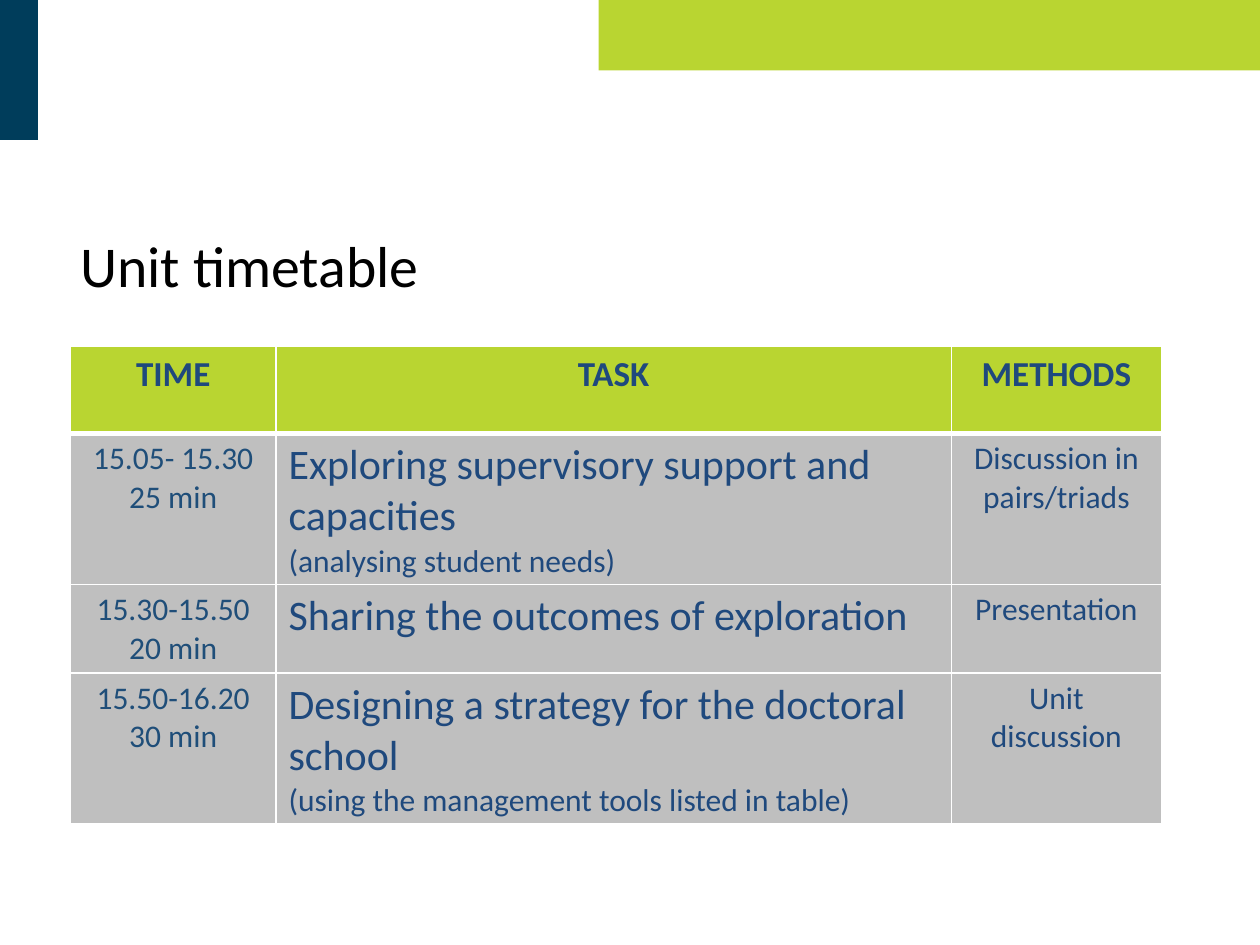
from pptx import Presentation
from pptx.dml.color import RGBColor
from pptx.enum.shapes import MSO_SHAPE as Shape
from pptx.enum.text import MSO_ANCHOR as Anchor, PP_ALIGN as Align
from pptx.oxml.ns import qn
from pptx.util import Inches, Pt
from lxml.etree import SubElement

FONT = "Calibri"
LIME, NAVY, GREY, WHITE = "B9D531", "003D5B", "BFBFBF", "FFFFFF"
BLUE, TIME_BLUE = "1F497D", "1F4E79"

COLUMN_WIDTHS = [1.63, 5.36, 1.67]
ROW_HEIGHTS = [0.69, 1.08, 0.68, 1.08]
HEADINGS = ["TIME", "TASK", "METHODS"]
# Each row: time lines, task, note under the task, method
SESSIONS = [
    (["15.05- 15.30 25 min"], "Exploring supervisory support and capacities",
     "(analysing student needs)", "Discussion in pairs/triads"),
    (["15.30-15.50", "20 min"], "Sharing the outcomes of exploration",
     None, "Presentation"),
    (["15.50-16.20", "30 min"], "Designing a strategy for the doctoral school",
     "(using the management tools listed in table)", "Unit discussion"),
]


def color(value):
    return RGBColor.from_string(value)


def add_text(para, text, size=18, fill=BLUE, bold=False):
    span = para.add_run()
    span.text = text
    span.font.name = FONT
    span.font.size = Pt(size)
    span.font.bold = bold
    span.font.color.rgb = color(fill)


def add_bar(page, left, top, width, height, fill):
    bar = page.shapes.add_shape(Shape.RECTANGLE, Inches(left), Inches(top),
                                Inches(width), Inches(height))
    bar.shadow.inherit = False
    bar.fill.solid()
    bar.fill.fore_color.rgb = color(fill)
    bar.line.fill.background()


def add_title(page, text):
    box = page.shapes.add_textbox(Inches(0.54), Inches(1.41), Inches(8.24), Inches(1.45))
    frame = box.text_frame
    frame.word_wrap = True
    frame.vertical_anchor = Anchor.MIDDLE
    para = frame.paragraphs[0]
    para.line_spacing = 0.9
    add_text(para, text, size=33, fill="000000")


def style_cell(cell, fill, top=1, bottom=1):
    properties = cell._tc.get_or_add_tcPr()
    for side, width in (("L", 1), ("R", 1), ("T", top), ("B", bottom)):
        line = SubElement(properties, qn(f"a:ln{side}"), w=str(Pt(width)))
        SubElement(SubElement(line, qn("a:solidFill")), qn("a:srgbClr"), val=WHITE)
    cell.fill.solid()
    cell.fill.fore_color.rgb = color(fill)


def write_centered(cell, lines, **text_format):
    frame = cell.text_frame
    for index, line in enumerate(lines):
        para = frame.add_paragraph() if index else frame.paragraphs[0]
        para.alignment = Align.CENTER
        add_text(para, line, **text_format)


def write_task(cell, task, note):
    para = cell.text_frame.paragraphs[0]
    add_text(para, task, size=24)
    if note:
        para.add_line_break()
        add_text(para, note)


def add_timetable(page):
    table = page.shapes.add_table(
        len(ROW_HEIGHTS), len(COLUMN_WIDTHS), Inches(0.56), Inches(2.75),
        Inches(sum(COLUMN_WIDTHS)), Inches(sum(ROW_HEIGHTS))).table
    for column, width in zip(table.columns, COLUMN_WIDTHS):
        column.width = Inches(width)
    for row, height in zip(table.rows, ROW_HEIGHTS):
        row.height = Inches(height)

    # Header row, with a thick rule below it
    for cell, heading in zip(table.rows[0].cells, HEADINGS):
        style_cell(cell, LIME, bottom=3)
        write_centered(cell, [heading], size=20, bold=True)

    # Sessions
    for index, (times, task, note, method) in enumerate(SESSIONS, start=1):
        time_cell, task_cell, method_cell = cells = list(table.rows[index].cells)
        for cell in cells:
            style_cell(cell, GREY, top=3 if index == 1 else 1)
        write_centered(time_cell, times, fill=TIME_BLUE)
        write_task(task_cell, task, note)
        write_centered(method_cell, [method])


def main():
    deck = Presentation()
    deck.slide_width, deck.slide_height = Inches(10), Inches(7.5)
    page = deck.slides.add_slide(deck.slide_layouts[6])
    # Corner bars
    add_bar(page, 4.75, 0, 5.25, 0.56, LIME)
    add_bar(page, -0.01, 0, 0.31, 1.11, NAVY)
    # Content
    add_title(page, "Unit timetable")
    add_timetable(page)
    deck.save("out.pptx")


if __name__ == "__main__":
    main()
